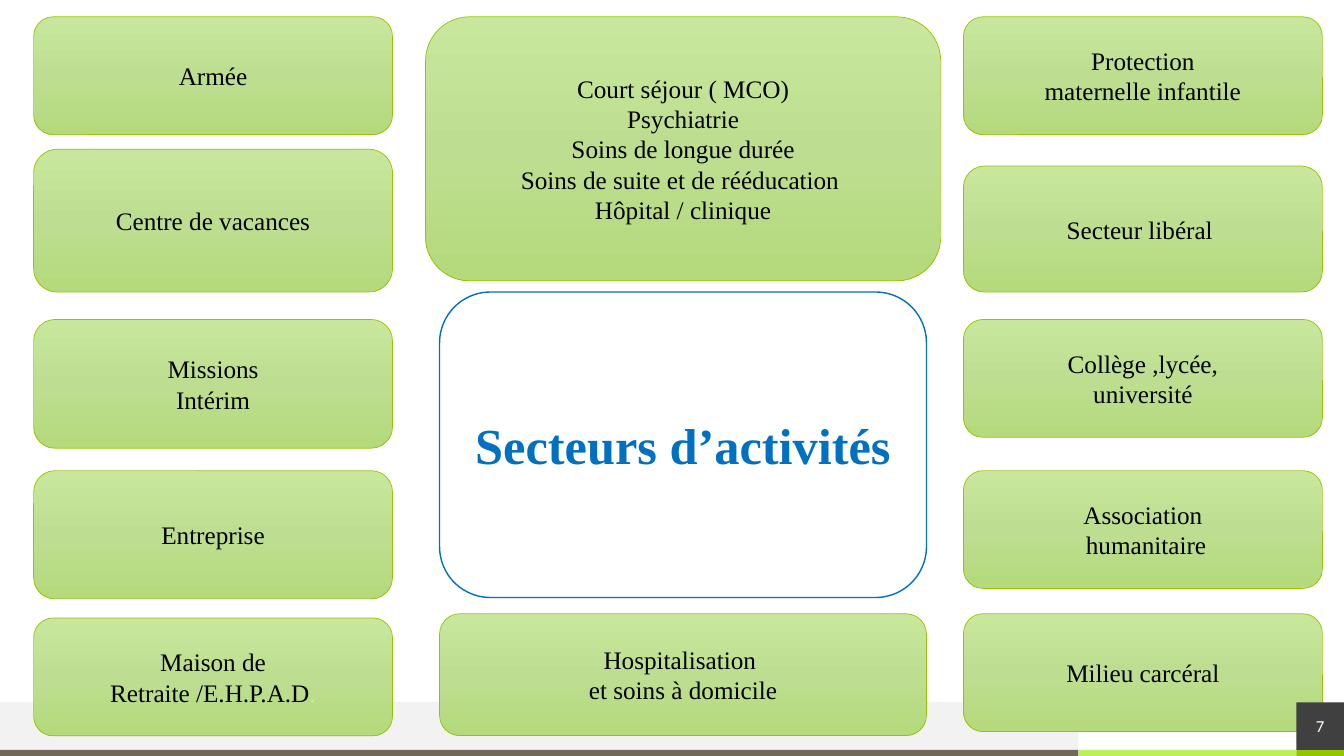
import copy
from dataclasses import dataclass

import pptx
import pptx.dml.color
import pptx.enum.shapes
import pptx.enum.text
import pptx.oxml
import pptx.oxml.ns
import pptx.util

Pt = pptx.util.Pt
SHAPES = pptx.enum.shapes.MSO_SHAPE
TEXT = pptx.enum.text


@dataclass(frozen=True)
class Theme:
    card_gradient: tuple = ("C8E79D", "BDDE90", "B4DA7C")
    card_line: str = "94C600"
    card_text: str = "000000"
    faint: str = "CAF278"
    hub: str = "0070C0"
    white: str = "FFFFFF"
    band: str = "F2F2F2"
    brown: str = "71685A"
    lime: str = "BDEF57"
    green: str = "94C600"
    dark: str = "404040"
    font: str = "Times New Roman"
    number_font: str = "Calibri"
    card_size: int = 18
    title_size: int = 36
    number_size: int = 12
    thin: float = 0.5
    hub_line: float = 1


def rgb(value):
    return pptx.dml.color.RGBColor.from_string(value)


def set_format(target, values):
    for name, value in values.items():
        setattr(target, name, value)


class SlideBuilder:
    def __init__(self, slide, theme):
        self.slide = slide
        self.theme = theme

    def shape(self, kind, box, fill=None, line=None, line_width=0.5):
        """Add a preset shape; without a fill colour it gets the card gradient."""
        shape = self.slide.shapes.add_shape(kind, *map(Pt, box))
        shape.shadow.inherit = False
        if fill:
            shape.fill.solid()
            shape.fill.fore_color.rgb = rgb(fill)
        else:
            self.card_gradient(shape)
        if line:
            shape.line.color.rgb = rgb(line)
            shape.line.width = Pt(line_width)
        else:
            shape.line.fill.background()
        return shape

    def card_gradient(self, shape):
        shape.fill.gradient()
        shape.fill.gradient_angle = 270
        stops = shape._element.spPr.find(".//" + pptx.oxml.ns.qn("a:gsLst"))
        stops.insert(1, copy.deepcopy(stops[0]))
        for index, stop in enumerate(shape.fill.gradient_stops):
            stop.position = index / 2
            stop.color.rgb = rgb(self.theme.card_gradient[index])

    def centred_text(self, shape, text, size, color, font=None, bold=False, **frame_format):
        """Put centred text in a shape, one paragraph for each line."""
        frame = shape.text_frame
        frame.text = text
        set_format(frame, {
            "word_wrap": False,
            "auto_size": TEXT.MSO_AUTO_SIZE.NONE,
            "vertical_anchor": TEXT.MSO_ANCHOR.MIDDLE,
            **frame_format,
        })
        for paragraph in frame.paragraphs:
            paragraph.alignment = TEXT.PP_ALIGN.CENTER
            for run in paragraph.runs:
                set_format(run.font, {
                    "name": font or self.theme.font, "size": Pt(size), "bold": bold})
                run.font.color.rgb = rgb(color)

    def card(self, box, text):
        card = self.shape(SHAPES.ROUNDED_RECTANGLE, box,
                          line=self.theme.card_line, line_width=self.theme.thin)
        self.centred_text(card, text, self.theme.card_size, self.theme.card_text)
        return card

    def faint_ending(self, card, text):
        run = card.text_frame.paragraphs[-1].add_run()
        run.text = text
        set_format(run.font, {"name": self.theme.font, "size": Pt(self.theme.card_size)})
        run.font.color.rgb = rgb(self.theme.faint)

    def hub(self, box, text):
        """Draw the central outline with the slide title on it."""
        outline = self.shape(SHAPES.FLOWCHART_ALTERNATE_PROCESS, box, self.theme.white,
                             self.theme.hub, self.theme.hub_line)
        title = self.slide.shapes.title
        set_format(title, dict(zip(("left", "top", "width", "height"), map(Pt, box))))
        self.centred_text(title, text, self.theme.title_size, self.theme.hub, bold=True)
        outline._element.addnext(title._element)

    def rule(self, start, end, color):
        line = self.slide.shapes.add_connector(
            pptx.enum.shapes.MSO_CONNECTOR.STRAIGHT, *map(Pt, start + end))
        line.line.color.rgb = rgb(color)
        line.line.width = Pt(self.theme.thin)
        line._element.spPr.append(pptx.oxml.parse_xml(
            "<a:effectLst %s/>" % pptx.oxml.ns.nsdecls("a")))

    def page_number(self, box, text):
        badge = self.shape(SHAPES.RECTANGLE, box, self.theme.dark)
        margins = dict.fromkeys(
            ("margin_left", "margin_top", "margin_right", "margin_bottom"), 0)
        self.centred_text(badge, text, self.theme.number_size, self.theme.white,
                          font=self.theme.number_font, **margins)


WIDTH, HEIGHT = 960, 540
FOOTER_TOP, STRIP_TOP = 501.8, 535.7
BAND_END, BADGE_LEFT = 770.4, 926.1
SIDE_WIDTH = 256.4
LEFT_X, CENTRE_X, RIGHT_X = 24, 314, 688.2
CENTRE_WIDTH = 347.8

# Column left edge, then (top, height, text) for each card
SIDE_COLUMNS = {
    LEFT_X: [
        (12, 84.2, "Armée"),
        (106.6, 102, "Centre de vacances"),
        (228.2, 92, "Missions\nIntérim"),
        (336.2, 91.6, "Entreprise"),
        (441.4, 84.2, "Maison de\nRetraite /E.H.P.A.D"),
    ],
    RIGHT_X: [
        (12, 84.2, "Protection\nmaternelle infantile"),
        (118.6, 90, "Secteur libéral "),
        (228.2, 84.2, "Collège ,lycée,\nuniversité"),
        (336.2, 84.2, "Association\n humanitaire"),
        (438.4, 84.2, "Milieu carcéral"),
    ],
}
HOSPITAL_CARE = ("Court séjour ( MCO)\nPsychiatrie\nSoins de longue durée\n"
                 "Soins de suite et de rééducation \nHôpital / clinique")


def main():
    presentation = pptx.Presentation()
    set_format(presentation, {"slide_width": Pt(WIDTH), "slide_height": Pt(HEIGHT)})
    theme = Theme()
    builder = SlideBuilder(
        presentation.slides.add_slide(presentation.slide_layouts[5]), theme)

    strip_height = HEIGHT - STRIP_TOP
    footer_height = STRIP_TOP - FOOTER_TOP
    builder.shape(SHAPES.RECTANGLE, (0, FOOTER_TOP, BAND_END, footer_height), theme.band)
    strip_edges = (0, BAND_END, BADGE_LEFT, WIDTH)
    strip_colors = (theme.brown, theme.lime, theme.green)
    for left, right, color in zip(strip_edges, strip_edges[1:], strip_colors):
        builder.shape(SHAPES.RECTANGLE, (left, STRIP_TOP, right - left, strip_height), color)
    builder.rule((WIDTH, FOOTER_TOP), (0, FOOTER_TOP), theme.band)

    builder.card((304, 12, 368, 188.6), HOSPITAL_CARE)
    for left, cards in SIDE_COLUMNS.items():
        for top, height, text in cards:
            card = builder.card((left, top, SIDE_WIDTH, height), text)
            if "E.H.P.A.D" in text:
                builder.faint_ending(card, ".")
    builder.hub((CENTRE_X, 208.6, CENTRE_WIDTH, 218.2), "Secteurs d’activités")
    builder.card((CENTRE_X, 438.4, CENTRE_WIDTH, 87),
                 "Hospitalisation \net soins à domicile")
    builder.page_number((BADGE_LEFT, FOOTER_TOP, WIDTH - BADGE_LEFT, footer_height), "7")

    presentation.save("out.pptx")


if __name__ == "__main__":
    main()
